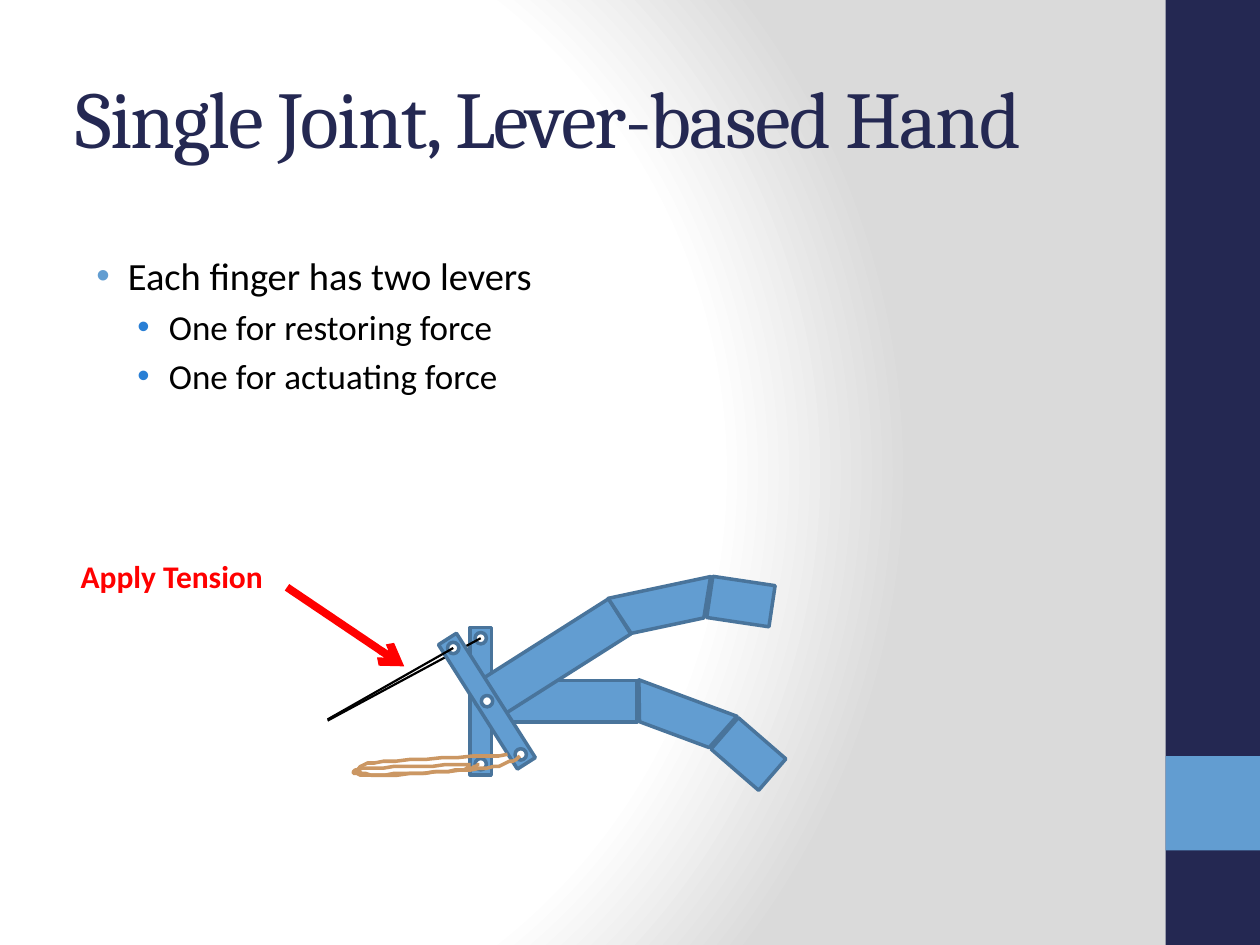
from math import cos, radians, sin

from lxml.etree import SubElement
from pptx import Presentation
from pptx.dml.color import RGBColor
from pptx.enum.shapes import MSO_CONNECTOR, MSO_SHAPE
from pptx.enum.text import MSO_ANCHOR as Anchor, MSO_AUTO_SIZE as AutoSize
from pptx.oxml import parse_xml
from pptx.oxml.ns import nsdecls, qn
from pptx.util import Pt

COLORS = {
    "navy": "242852", "blue": "629DD1", "bright": "297FD5", "edge": "49749B",
    "band": "CB9763", "white": "FFFFFF", "gray": "DADADA", "black": "000000",
    "red": "FF0000",
}


def rgb(name):
    return RGBColor.from_string(COLORS[name])


def add_text(frame, text, size, color, font="Calibri", bold=False, spacing=0,
             first=True, before=0, bullet=None, margin=0, level=0):
    para = frame.paragraphs[0] if first else frame.add_paragraph()
    para.space_before, para.level = Pt(before), level
    run = para.add_run()
    run.text = text
    run.font.size, run.font.name, run.font.bold = Pt(size), font, bold
    run.font.color.rgb = rgb(color)
    if spacing:
        run.font._element.set("spc", str(spacing * 100))
    if bullet:
        props = para._p.get_or_add_pPr()
        props.set("marL", str(Pt(margin)))
        props.set("indent", str(Pt(-18)))
        SubElement(SubElement(props, qn("a:buClr")), qn("a:srgbClr")).set("val", COLORS[bullet])
        SubElement(props, qn("a:buFont")).set("typeface", "Arial")
        SubElement(props, qn("a:buChar")).set("char", "•")


def add_frame(slide, box, anchor=Anchor.TOP):
    frame = slide.shapes.add_textbox(*map(Pt, box)).text_frame
    frame.word_wrap, frame.vertical_anchor = True, anchor
    return frame


def add_solid(shapes, kind, box, fill="blue", edge=None, rotation=0):
    shape = shapes.add_shape(kind, *map(Pt, box))
    shape.shadow.inherit = False
    shape.rotation = rotation
    shape.fill.solid()
    shape.fill.fore_color.rgb = rgb(fill)
    if edge:
        shape.line.color.rgb, shape.line.width = rgb(edge), Pt(2)
    else:
        shape.line.fill.background()
    return shape


def add_line(shapes, start, end, color, width, arrow=False):
    line = shapes.add_connector(MSO_CONNECTOR.STRAIGHT, *map(Pt, start + end))
    line.line.color.rgb, line.line.width = rgb(color), Pt(width)
    if arrow:
        SubElement(line.line._get_or_add_ln(), qn("a:tailEnd")).set("type", "arrow")
    SubElement(line._element.spPr, qn("a:effectLst"))


def add_band(shapes, points, steps=10):
    """Draw a chain of cubic curves: a start point, then three points per curve."""
    def on_curve(curve, t):
        weights = ((1 - t) ** 3, 3 * t * (1 - t) ** 2, 3 * t * t * (1 - t), t ** 3)
        return tuple(sum(w * p[axis] for w, p in zip(weights, curve)) for axis in (0, 1))

    outline = [on_curve(points[i:i + 4], step / steps)
               for i in range(0, len(points) - 1, 3) for step in range(1, steps + 1)]
    builder = shapes.build_freeform(*points[0], scale=Pt(1))
    builder.add_line_segments(outline, close=False)
    band = builder.convert_to_shape()
    band.shadow.inherit = False
    band.fill.background()
    band.line.color.rgb, band.line.width = rgb("band"), Pt(2)


def add_backdrop(slide, width, height):
    slide.background.fill.solid()
    props = slide.element.xpath("p:cSld/p:bg/p:bgPr")[0]
    stops = "".join(f'<a:gs pos="{pos}000"><a:srgbClr val="{COLORS[color]}"/></a:gs>'
                    for pos, color in ((0, "white"), (75, "white"), (100, "gray")))
    props.replace(props[0], parse_xml(
        f'<a:gradFill {nsdecls("a")} rotWithShape="1"><a:gsLst>{stops}</a:gsLst>'
        '<a:path path="circle"><a:fillToRect l="20000" t="50000" r="100000" b="50000"/>'
        '</a:path></a:gradFill>'))
    # Side stripe with its square accent
    stripe = 54
    add_solid(slide.shapes, MSO_SHAPE.RECTANGLE, (width - stripe, 0, stripe, height), "navy")
    add_solid(slide.shapes, MSO_SHAPE.RECTANGLE,
              (width - stripe, height - 2 * stripe, stripe, stripe))


def add_title(slide, box):
    add_text(add_frame(slide, box, Anchor.MIDDLE), "Single Joint, Lever-based Hand",
             46, "navy", font="Cambria", spacing=-1)


def add_bullets(slide, box):
    frame = add_frame(slide, box)
    add_text(frame, "Each finger has two levers", 22, "black",
             before=4.4, bullet="blue", margin=27)
    for lever_use in ("One for restoring force", "One for actuating force"):
        add_text(frame, lever_use, 20, "black", first=False, before=4,
                 bullet="bright", margin=50.4, level=1)


def add_finger(slide, origin, base, middle, tip, lever, band, cable_end):
    """Each part is (x, y, rotation) from the origin; the lever is given by its centre."""
    shapes = slide.shapes.add_group_shape().shapes
    left, top = origin

    def add_part(kind, x, y, width, height, rotation, fill="blue"):
        return add_solid(shapes, kind, (left + x, top + y, width, height),
                         fill, "edge", rotation)

    # Three finger segments
    for (x, y, rotation), length in ((base, 84.2), (tip, 36)):
        add_part(MSO_SHAPE.RECTANGLE, x, y, length, 23.8, rotation)
    x, y, rotation = middle
    segment = add_part(MSO_SHAPE.TRAPEZOID, x, y, 59.8, 22.3, rotation)
    segment.adjustments[0] = 0.39

    # Lever with a hole at each end and at the joint
    x, y, rotation = lever
    width, height, hole, reach = 12.2, 84.2, 6.5, 36
    add_part(MSO_SHAPE.RECTANGLE, x - width / 2, y - height / 2, width, height, rotation)
    angle = radians(rotation)
    centers = [(x - d * sin(angle), y + d * cos(angle)) for d in (reach, -reach, 0)]
    for cx, cy in centers:
        add_part(MSO_SHAPE.OVAL, cx - hole / 2, cy - hole / 2, hole, hole, rotation, "white")

    # Rubber band below, cable from the top hole
    add_band(shapes, [(left + px, top + py) for px, py in band])
    cable_start, cable_stop = ((left + px, top + py) for px, py in (centers[1], cable_end))
    add_line(shapes, cable_start, cable_stop, "black", 1.25)


def add_hand(slide, origin):
    add_finger(slide, origin, base=(93, 30.8, 0), middle=(172.3, 40.2, 200.4),
               tip=(222.7, 61, 40.9), lever=(87.7, 42.7, 0), cable_end=(0.2, 53.8),
               band=[(87.3, 79), (84.4, 80.5), (80.8, 81.9), (69.3, 82.6), (58.5, 84.1),
                     (29, 84.8), (21.1, 84.8), (13.2, 84.8), (12.4, 81.9), (22.5, 81.2),
                     (33.3, 80.5), (72.2, 79), (82.3, 79)])
    add_finger(slide, origin, base=(89.5, 4.9, 327.6), middle=(162.2, -22.5, 168),
               tip=(218.4, -26.1, 8.5), lever=(91.3, 42.7, 327.6), cable_end=(0.2, 53.1),
               band=[(110.4, 74), (106.1, 76.9), (101, 79.8), (87.3, 81.2), (72.9, 82.7),
                     (34.8, 85.5), (24.7, 84.8), (14.6, 84.1), (13.9, 79.8), (26.9, 77.6),
                     (39.8, 76.2), (90.2, 74), (103.2, 73.3)])


def add_tension_label(slide, box):
    left, top, width, _ = box
    add_line(slide.shapes, (left + width - 3, top + 21), (left + width + 64, top + 66.2),
             "red", 4.5, arrow=True)
    frame = add_frame(slide, box)
    frame.auto_size = AutoSize.SHAPE_TO_FIT_TEXT
    add_text(frame, "Apply Tension", 18, "red", bold=True)


def main():
    deck = Presentation()
    width, height = 720, 540
    deck.slide_width, deck.slide_height = Pt(width), Pt(height)
    slide = deck.slides.add_slide(deck.slide_layouts[6])
    add_backdrop(slide, width, height)
    add_title(slide, (36, 21.6, 600, 90))
    add_bullets(slide, (39, 140.4, 600, 378))
    add_hand(slide, (187, 358))
    add_tension_label(slide, (39, 314.6, 128, 29))
    deck.save("out.pptx")


if __name__ == "__main__":
    main()
